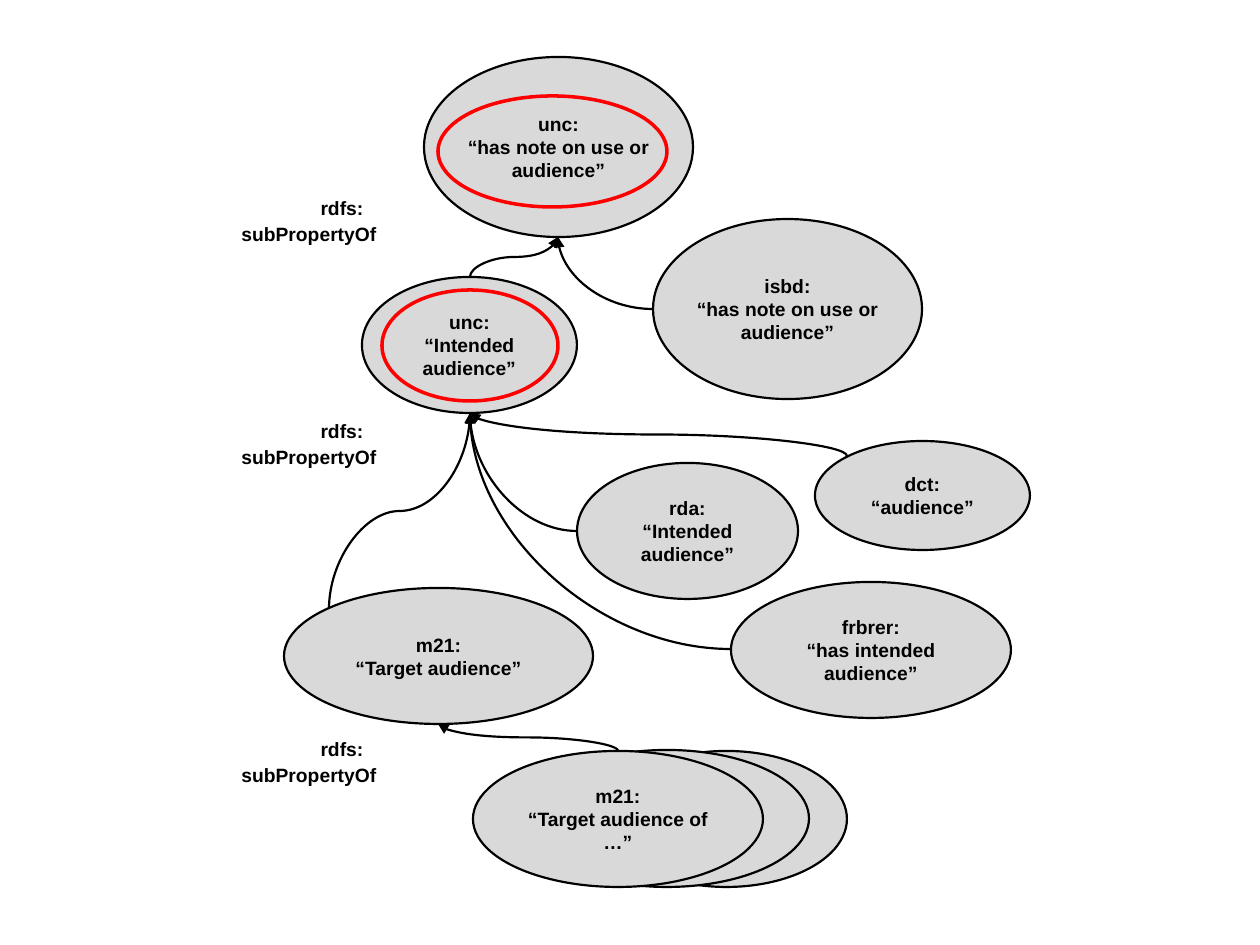
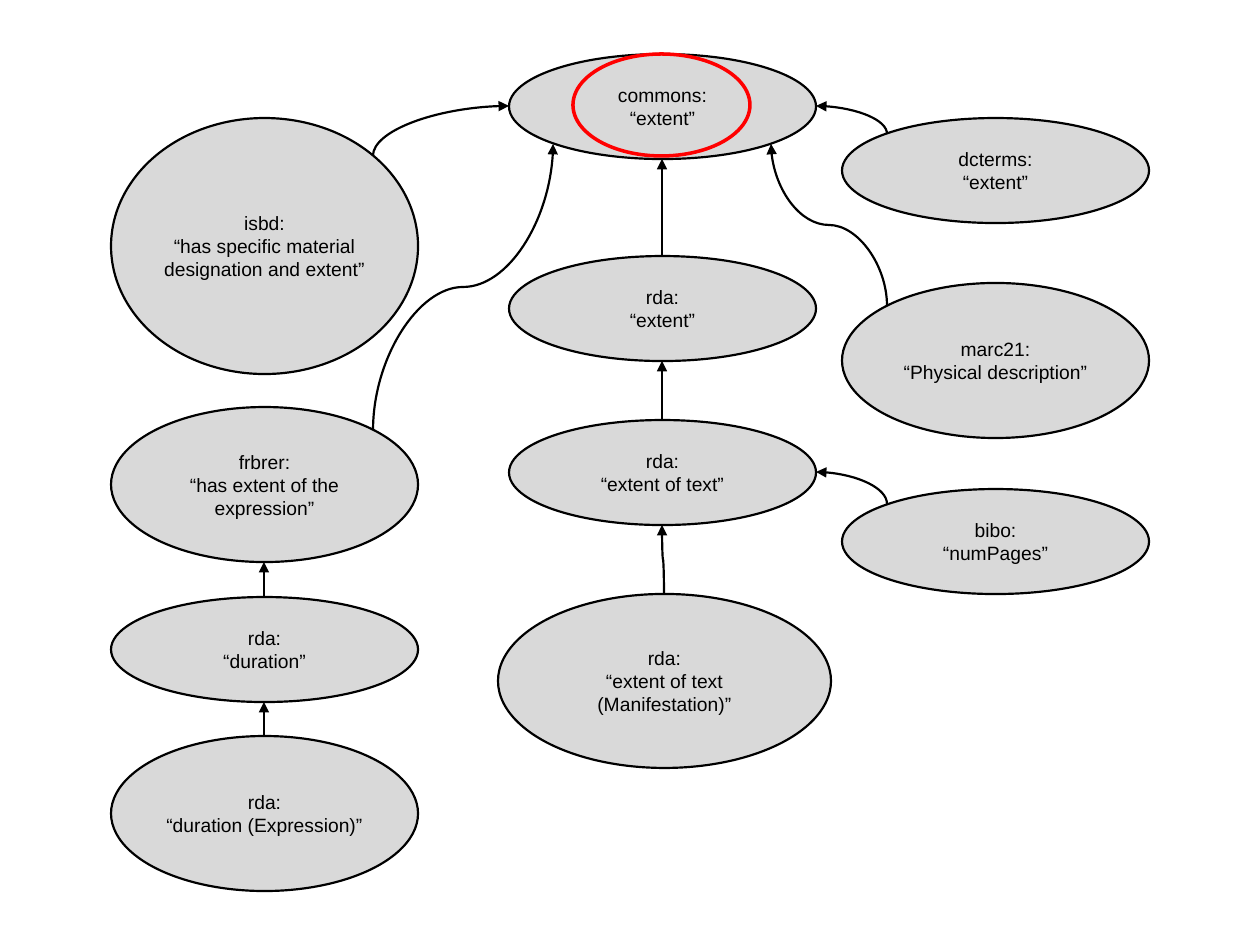
"""Build two slides that map audience and extent properties with ovals and curved arrows."""
from lxml import etree
from pptx import Presentation
from pptx import util as u
from pptx.dml.color import RGBColor
from pptx.enum import shapes, text
from pptx.oxml import ns

PX = 914400 / 126
COLOURS = {"oval": "D9D9D9", "ink": "000000", "highlight": "FF0000"}
FONT = {"name": "Arial", "size": u.Pt(11)}
FRAME = {"margin_left": 0, "margin_top": 0, "margin_right": 0, "margin_bottom": 0,
         "word_wrap": True, "vertical_anchor": text.MSO_ANCHOR.MIDDLE}
CURVES = {"s": "curvedConnector3", "rise": "curvedConnector2", "side": "curvedConnector2"}


def add_oval(page, place, words="", bold=False, highlight=False):
    oval = page.shapes.add_shape(shapes.MSO_SHAPE.OVAL, *[round(v * PX) for v in place])
    oval.shadow.inherit = False
    oval.line.width = u.Pt(2 if highlight else 1.25)
    oval.line.color.rgb = RGBColor.from_string(COLOURS["highlight" if highlight else "ink"])
    if highlight:
        oval.fill.background()
    else:
        oval.fill.solid()
        oval.fill.fore_color.rgb = RGBColor.from_string(COLOURS["oval"])
    if words:
        for name, value in FRAME.items():
            setattr(oval.text_frame, name, value)
        oval.text_frame.text = words
        for para in oval.text_frame.paragraphs:
            para.alignment = text.PP_ALIGN.CENTER
            for name, value in {**FONT, "bold": bold}.items():
                setattr(para.font, name, value)
            para.font.color.rgb = RGBColor.from_string(COLOURS["ink"])


def add_arrow(page, kind, x1, y1, x2, y2):
    if kind == "straight":
        arrow = page.shapes.add_connector(
            shapes.MSO_CONNECTOR.STRAIGHT, *[round(v * PX) for v in (x1, y1, x2, y2)])
    else:
        wide, high = abs(x2 - x1), abs(y2 - y1)
        if kind != "side":
            wide, high = high, wide
        left, top = (x1 + x2 - wide) / 2, (y1 + y2 - high) / 2
        arrow = page.shapes.add_connector(
            shapes.MSO_CONNECTOR.CURVE,
            *[round(v * PX) for v in (left, top, left + wide, top + high)])
        if kind == "side":
            turn = {"rot": 180}
        elif x2 < x1:
            turn = {"rot": 270, "flipV": 1}
        else:
            turn = {"rot": 90, "flipH": 1, "flipV": 1}
        turn["rot"] *= 60000
        frame = arrow._element.spPr.find(ns.qn("a:xfrm"))
        for name, value in turn.items():
            frame.set(name, str(value))
        arrow._element.spPr.find(ns.qn("a:prstGeom")).set("prst", CURVES[kind])
    arrow.line.width = u.Pt(1.25)
    arrow.line.color.rgb = RGBColor.from_string(COLOURS["ink"])
    etree.SubElement(arrow.line._get_or_add_ln(), ns.qn("a:tailEnd"), type="triangle")
    etree.SubElement(arrow._element.spPr, ns.qn("a:effectLst"))


deck = Presentation()
deck.slide_width, deck.slide_height = round(1260 * PX), round(945 * PX)
blank = deck.slide_layouts[6]

page = deck.slides.add_slide(blank)
for top in (190, 413, 731):
    box = page.shapes.add_textbox(*[round(v * PX) for v in (229, top, 226, 87)])
    box.text_frame.word_wrap = True
    box.text_frame.text = "rdfs:\nsubPropertyOf"
    prefix, term = box.text_frame.paragraphs
    prefix.alignment = text.PP_ALIGN.CENTER
    term.line_spacing = 1.15
    term.space_after = u.Pt(10)
    for para in (prefix, term):
        for name, value in {**FONT, "bold": True}.items():
            setattr(para.font, name, value)
        para.font.color.rgb = RGBColor.from_string(COLOURS["ink"])

audience_ovals = [
    ((424, 57, 269, 180), "unc:\n“has note on use or audience”"),
    ((653, 219, 269, 180), "isbd:\n“has note on use or audience”"),
    ((362, 277, 215, 136), "unc:\n“Intended audience”"),
    ((577, 463, 221, 136), "rda:\n“Intended audience”"),
    ((284, 588, 309, 136), "m21:\n“Target audience”"),
    ((731, 582, 280, 136), "frbrer:\n“has intended audience”"),
    ((815, 441, 215, 109), "dct:\n“audience”"),
    ((606, 751, 241, 136), ""),
    ((525, 750, 284, 137), ""),
    ((473, 751, 290, 136), "m21:\n“Target audience of …”"),
]
for place, words in audience_ovals:
    add_oval(page, place, words, bold=True)

audience_arrows = [
    ("s", 847, 456, 470, 413),
    ("side", 653, 309, 558, 237),
    ("s", 470, 277, 558, 237),
    ("side", 577, 531, 470, 413),
    ("s", 329, 609, 470, 413),
    ("side", 731, 649, 470, 413),
    ("s", 618, 751, 438, 724),
]
for arrow in audience_arrows:
    add_arrow(page, *arrow)
for place in ((438, 96, 229, 111), (382, 290, 176, 111)):
    add_oval(page, place, highlight=True)

page = deck.slides.add_slide(blank)
LEFT, MIDDLE, RIGHT = 111, 509, 842
WIDE, LOW, TALL = 307, 105, 155
extent_ovals = [
    ((RIGHT, 118, WIDE, LOW), "dcterms:\n“extent”"),
    ((MIDDLE, 54, WIDE, LOW), "commons:\n“extent”"),
    ((MIDDLE, 256, WIDE, LOW), "rda:\n“extent”"),
    ((MIDDLE, 420, WIDE, LOW), "rda:\n“extent of text”"),
    ((LEFT, 118, WIDE, 256), "isbd:\n“has specific material designation and extent”"),
    ((RIGHT, 283, WIDE, TALL), "marc21:\n“Physical description”"),
    ((LEFT, 597, WIDE, LOW), "rda:\n“duration”"),
    ((LEFT, 736, WIDE, TALL), "rda:\n“duration (Expression)”"),
    ((LEFT, 407, WIDE, TALL), "frbrer:\n“has extent of the expression”"),
    ((RIGHT, 489, WIDE, LOW), "bibo:\n“numPages”"),
    ((498, 594, 333, 174), "rda:\n“extent of text (Manifestation)”"),
]
for place, words in extent_ovals:
    add_oval(page, place, words)

extent_arrows = [
    ("rise", 373, 156, 509, 106),
    ("rise", 887, 134, 816, 106),
    ("rise", 887, 504, 816, 472),
    ("s", 887, 306, 771, 144),
    ("s", 373, 430, 553, 144),
    ("s", 664, 594, 662, 525),
    ("straight", 662, 420, 662, 361),
    ("straight", 662, 256, 662, 159),
    ("straight", 264, 597, 264, 562),
    ("straight", 264, 736, 264, 702),
]
for arrow in extent_arrows:
    add_arrow(page, *arrow)
add_oval(page, (573, 54, 177, 102), highlight=True)

deck.save("out.pptx")
